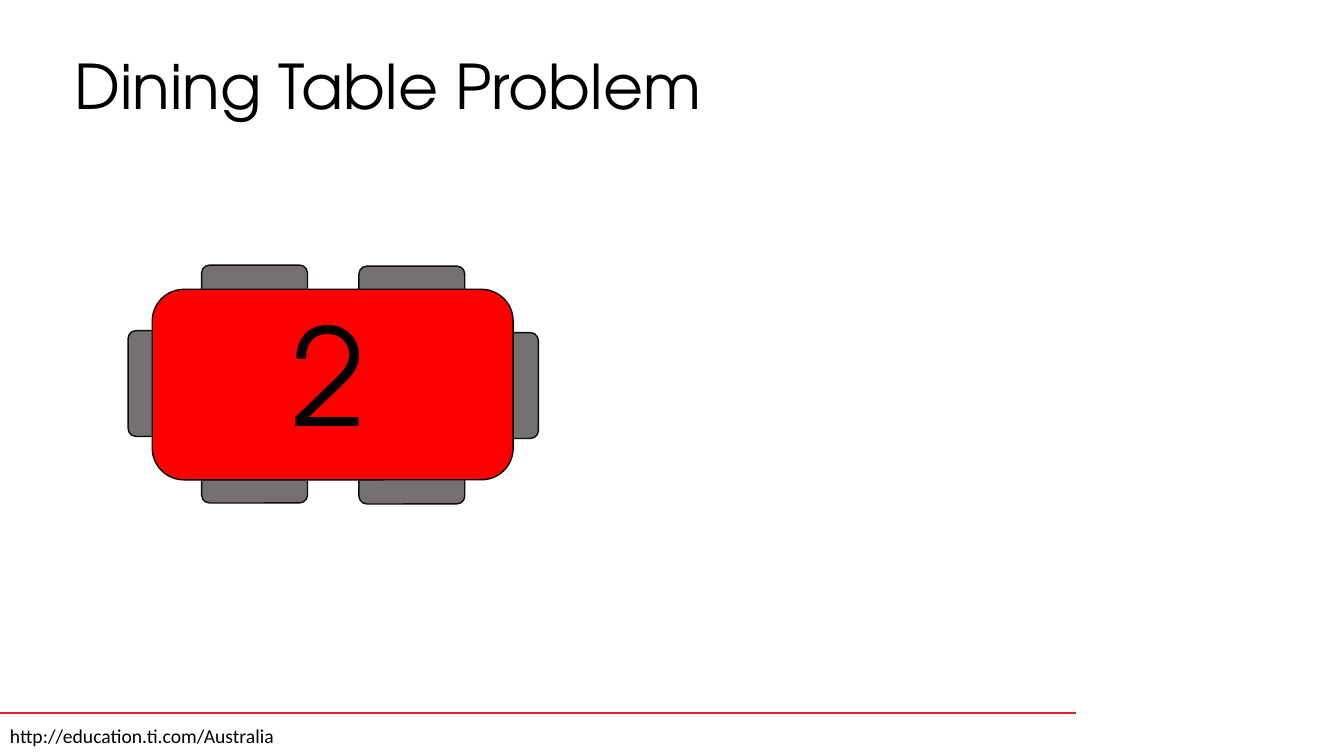
import pptx
import pptx.util
import pptx.dml.color
import pptx.enum.shapes
import pptx.enum.text
import lxml.etree

Inches = pptx.util.Inches
Pt = pptx.util.Pt
RGBColor = pptx.dml.color.RGBColor
ANCHOR = pptx.enum.text.MSO_ANCHOR

BLACK = RGBColor(0x00, 0x00, 0x00)
CHAIR_GREY = RGBColor(0x76, 0x71, 0x71)
CHAIR_EDGE = RGBColor(0x0D, 0x0D, 0x0D)
TABLE_RED = RGBColor(0xFF, 0x00, 0x00)
RULE_RED = RGBColor(0xED, 0x1C, 0x24)
HEADING_FONT = "TeX Gyre Adventor"

prs = pptx.Presentation()
prs.slide_width = Inches(13.33)
prs.slide_height = Inches(7.5)
s = prs.slides.add_slide(prs.slide_layouts[6])


def add_text(text, left, top, width, height, size, font=HEADING_FONT, anchor=ANCHOR.TOP):
    sp = s.shapes.add_textbox(Inches(left), Inches(top), Inches(width), Inches(height))
    tf = sp.text_frame
    tf.word_wrap = True
    tf.vertical_anchor = anchor
    r = tf.paragraphs[0].add_run()
    r.text = text
    r.font.size = Pt(size)
    r.font.name = font
    r.font.color.rgb = BLACK


def add_rounded(left, top, width, height, fill, edge, rotation=0):
    sp = s.shapes.add_shape(pptx.enum.shapes.MSO_SHAPE.ROUNDED_RECTANGLE,
                            Inches(left), Inches(top), Inches(width), Inches(height))
    sp.shadow.inherit = False
    sp.rotation = rotation
    sp.fill.solid()
    sp.fill.fore_color.rgb = fill
    sp.line.color.rgb = edge
    sp.line.width = Pt(1)


# Footer rule and address
rule = s.shapes.add_connector(pptx.enum.shapes.MSO_CONNECTOR.STRAIGHT,
                              Inches(0), Inches(7.07), Inches(10.67), Inches(7.07))
rule.line.color.rgb = RULE_RED
rule.line.width = Pt(1.5)
lxml.etree.SubElement(rule._element.spPr, pptx.oxml.ns.qn("a:effectLst"))
add_text("http://education.ti.com/Australia", 0, 7.13, 6.41, 0.34, 14, font="Calibri")

# Chairs: one at each end, two along each side
chairs = [(0.98, 3.57, 90), (3.56, 4.53, 0), (2, 4.52, 0),
          (4.58, 3.59, 90), (3.56, 2.64, 0), (2, 2.63, 0)]
for left, top, rotation in chairs:
    add_rounded(left, top, 1.05, 0.47, CHAIR_GREY, CHAIR_EDGE, rotation)

# Table top with its number
add_rounded(1.51, 2.87, 3.58, 1.89, TABLE_RED, BLACK)
add_text("2", 2.79, 2.85, 1.05, 1.72, 96)

# Title
add_text("Dining Table Problem", 0.64, 0.42, 9.78, 0.84, 44, anchor=ANCHOR.MIDDLE)

prs.save("out.pptx")
